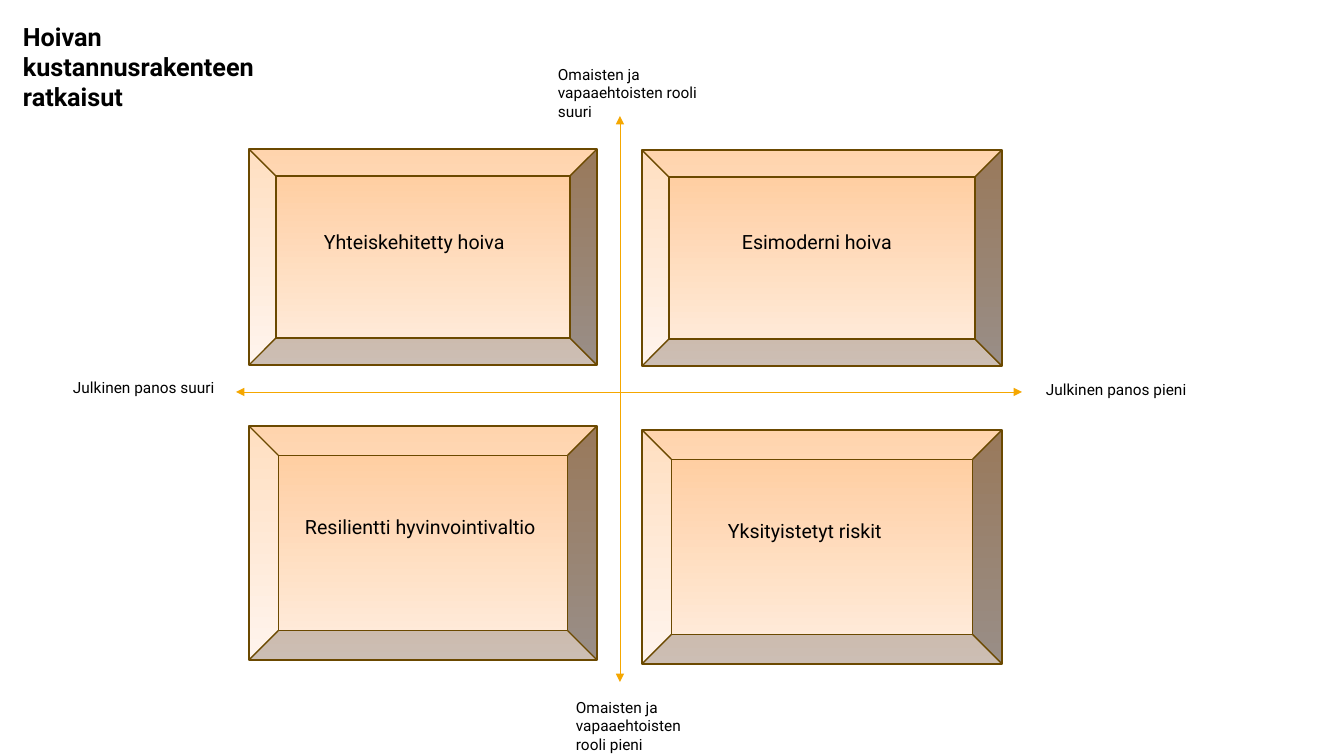
import pptx
import pptx.dml.color
import pptx.enum.shapes
import pptx.enum.text
import pptx.util
import lxml.etree

# text, left, top, width, height in px
TITLE = ("Hoivan kustannusrakenteen ratkaisut", 13, 16, 273, 102)
ENDS = [
    ("Omaisten ja vapaaehtoisten rooli suuri", 548, 60, 170, 67),
    ("Omaisten ja vapaaehtoisten rooli pieni", 566, 693, 134, 67),
    ("Julkinen panos suuri", 63, 373, 236, 29),
    ("Julkinen panos pieni", 1036, 375, 271, 29),
]
# left, top, width, height of the frame, then its label
FRAMES = [
    ((249, 149, 348, 216), ("Yhteiskehitetty hoiva", 314, 225, 224, 34)),
    ((642, 150, 360, 216), ("Esimoderni hoiva", 732, 225, 262, 34)),
    ((249, 426, 348, 234), ("Resilientti hyvinvointivaltio", 295, 510, 258, 34)),
    ((642, 430, 360, 234), ("Yksityistetyt riskit", 718, 514, 233, 34)),
]
# x and y of both ends
AXES = [(1022, 392, 236, 392), (620, 116, 620, 682)]

THEME = {
    "font": "Roboto", "text": "000000", "axis": "F5A700", "edge": "6B4900",
    "fade": ("FFCA99", "FFEEE1"),
    "title": 18, "label": 14, "end": 11, "thin": 0.5, "thick": 1,
}
SCALE = 9071.43  # EMU per px


def px(*nums):
    return [round(n * SCALE) for n in nums]


def tint(key):
    return pptx.dml.color.RGBColor.from_string(THEME[key])


def add_text(slide, item, kind, bold=False):
    text, *box = item
    frame = slide.shapes.add_textbox(*px(*box)).text_frame
    frame.word_wrap = True
    frame.auto_size = pptx.enum.text.MSO_AUTO_SIZE.SHAPE_TO_FIT_TEXT
    frame.text = text
    font = frame.paragraphs[0].runs[0].font
    font.name = THEME["font"]
    font.size = pptx.util.Pt(THEME[kind])
    font.bold = bold
    font.color.rgb = tint("text")


def add_axis(slide, ends):
    """Draw a line with an arrowhead at both ends."""
    axis = slide.shapes.add_connector(
        pptx.enum.shapes.MSO_CONNECTOR.STRAIGHT, *px(*ends))
    axis.line.color.rgb = tint("axis")
    axis.line.width = pptx.util.Pt(THEME["thin"])
    line = axis.line._get_or_add_ln()
    for tag in ("a:headEnd", "a:tailEnd"):
        tip = lxml.etree.SubElement(line, pptx.oxml.ns.qn(tag))
        tip.set("type", "triangle")
    lxml.etree.SubElement(axis._element.spPr, pptx.oxml.ns.qn("a:effectLst"))


def add_frame(slide, box):
    bevel = slide.shapes.add_shape(
        pptx.enum.shapes.MSO_SHAPE.BEVEL, *px(*box))
    bevel.shadow.inherit = False
    bevel.fill.gradient()
    bevel.fill.gradient_angle = 270
    for stop, shade in zip(bevel.fill.gradient_stops, THEME["fade"]):
        stop.color.rgb = pptx.dml.color.RGBColor.from_string(shade)
    bevel.line.color.rgb = tint("edge")
    bevel.line.width = pptx.util.Pt(THEME["thick"])


def main():
    deck = pptx.Presentation()
    deck.slide_width, deck.slide_height = px(1344, 756)
    slide = deck.slides.add_slide(deck.slide_layouts[6])
    add_text(slide, TITLE, "title", bold=True)
    for item in ENDS:
        add_text(slide, item, "end")
    for ends in AXES:
        add_axis(slide, ends)
    for box, label in FRAMES:
        add_frame(slide, box)
        add_text(slide, label, "label")
    deck.save("out.pptx")


if __name__ == "__main__":
    main()
